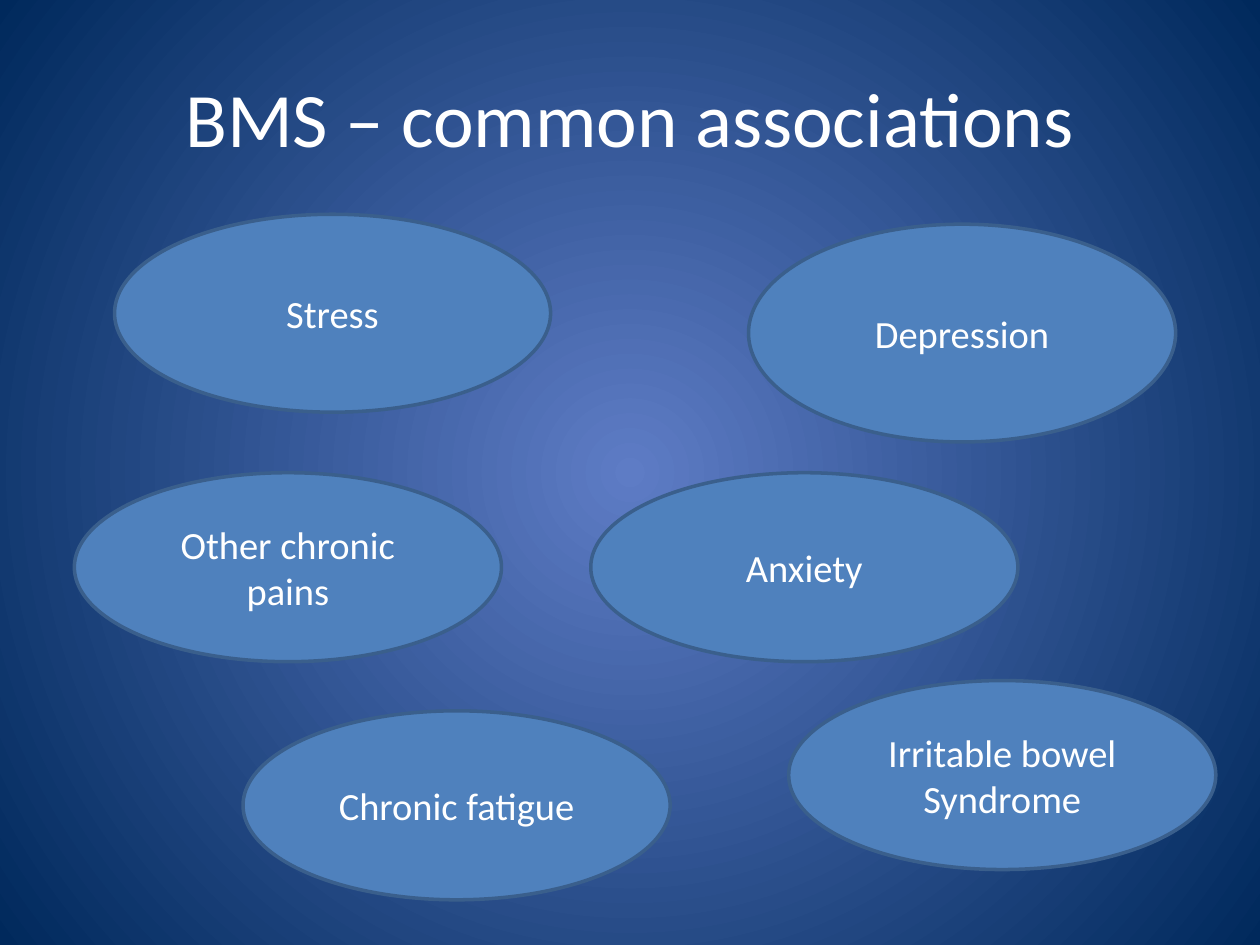
import dataclasses

import lxml.etree
import pptx
import pptx.dml.color
import pptx.enum.shapes
import pptx.enum.text
import pptx.oxml.ns
import pptx.util

Cm = pptx.util.Cm
Pt = pptx.util.Pt


@dataclasses.dataclass(frozen=True)
class Theme:
    font: str = "Calibri"
    head: int = 44
    body: int = 22
    edge: int = 2
    ink: str = "FFFFFF"
    fill: str = "4F81BD"
    line: str = "3A5F8C"
    glow: str = "5E7CC5"
    dark: str = "00295C"


THEME = Theme()
WIDE, HIGH = 8.61, 3.81
MID = 9.53

ITEMS = [
    ("Stress", 2.31, 4.32, 8.79, 3.99),
    ("Depression", 15.09, 4.52, WIDE, 4.39),
    ("Other chronic pains", 1.5, MID, WIDE, HIGH),
    ("Irritable bowel Syndrome", 15.9, 13.72, WIDE, HIGH),
    ("Chronic fatigue", 4.9, 14.33, WIDE, HIGH),
    ("Anxiety", 11.91, MID, WIDE, HIGH),
]


def tint(code):
    return pptx.dml.color.RGBColor.from_string(code)


def write(shape, text, size=THEME.body, color=THEME.ink, font=THEME.font):
    frame = shape.text_frame
    frame.word_wrap = True
    frame.vertical_anchor = pptx.enum.text.MSO_ANCHOR.MIDDLE
    para = frame.paragraphs[0]
    para.alignment = pptx.enum.text.PP_ALIGN.CENTER
    run = para.add_run()
    run.text = text
    run.font.name = font
    run.font.size = Pt(size)
    run.font.color.rgb = tint(color)


def paint(slide):
    fill = slide.background.fill
    fill.gradient()
    for stop, code in zip(fill.gradient_stops, (THEME.glow, THEME.dark)):
        stop.color.rgb = tint(code)
    qn = pptx.oxml.ns.qn
    grad = slide.element.find(".//" + qn("a:gradFill"))
    grad.remove(grad.find(qn("a:lin")))
    ring = lxml.etree.SubElement(grad, qn("a:path"), path="circle")
    sides = dict.fromkeys("ltrb", "50000")
    lxml.etree.SubElement(ring, qn("a:fillToRect"), sides)


def title(slide, text):
    box = slide.shapes.add_textbox(Cm(1.27), Cm(0.76), Cm(22.86), Cm(3.18))
    write(box, text, size=THEME.head)


def oval(slide, text, left, top, width, height):
    kind = pptx.enum.shapes.MSO_SHAPE.OVAL
    shape = slide.shapes.add_shape(
        kind, Cm(left), Cm(top), Cm(width), Cm(height)
    )
    shape.shadow.inherit = False
    shape.fill.solid()
    shape.fill.fore_color.rgb = tint(THEME.fill)
    shape.line.color.rgb = tint(THEME.line)
    shape.line.width = Pt(THEME.edge)
    write(shape, text)


def main():
    deck = pptx.Presentation()
    deck.slide_width = Cm(25.4)
    deck.slide_height = Cm(19.05)
    slide = deck.slides.add_slide(deck.slide_layouts[6])
    paint(slide)
    title(slide, "BMS – common associations")
    for item in ITEMS:
        oval(slide, *item)
    deck.save("out.pptx")


if __name__ == "__main__":
    main()
